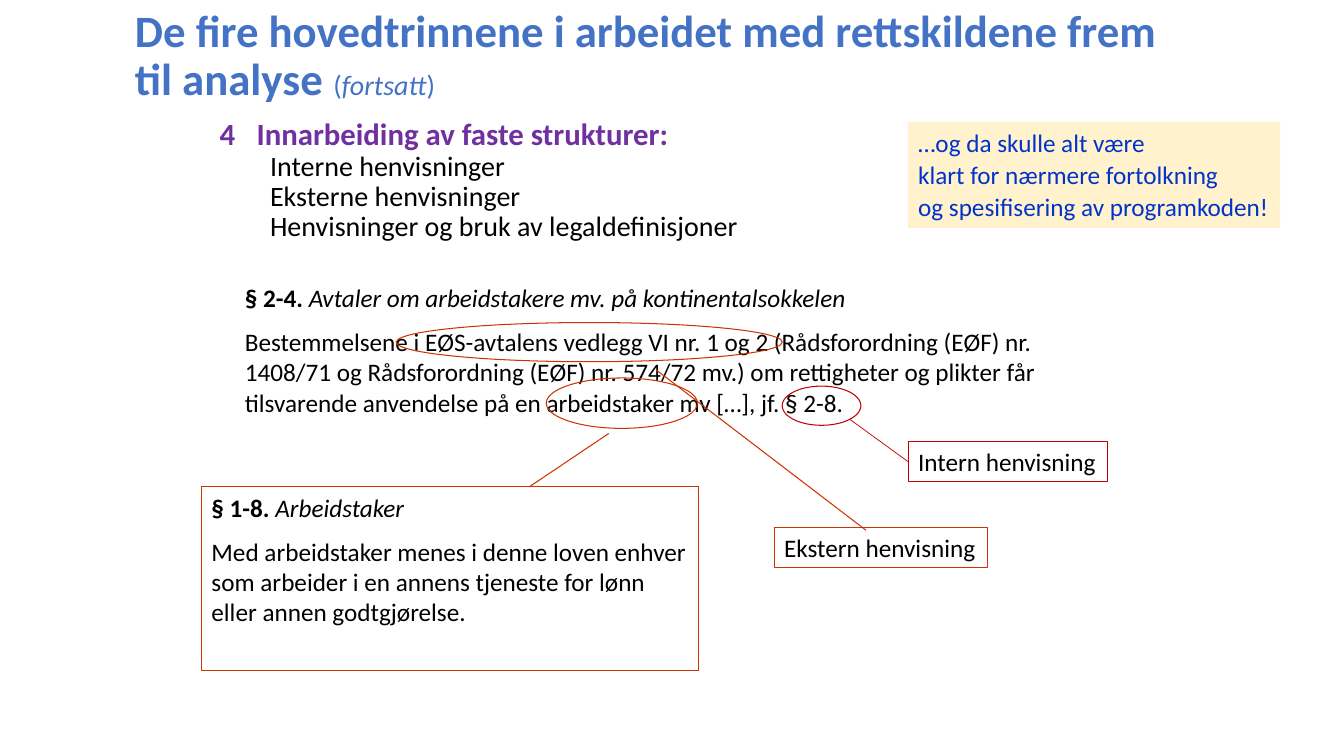
import pptx
import pptx.dml.color
import pptx.enum.shapes
import pptx.enum.text
import pptx.oxml.ns
import pptx.util
from lxml import etree

Pt = pptx.util.Pt
RUST, RED = "CC3300", "C00000"
BLUE, PURPLE, BLACK = "4472C4", "7030A0", "000000"
NOTE_INK, NOTE_FILL = "0033CC", "FFF2CC"


def color(hex_code):
    return pptx.dml.color.RGBColor.from_string(hex_code)


class LawSlide:
    font = "Calibri"
    size = 18

    def __init__(self, deck):
        self.slide = deck.slides.add_slide(deck.slide_layouts[6])

    def text(self, box, paragraphs, ink=BLACK, size=None, line=None, fill=None,
             wrap=True, middle=False, gap=0, spacing=1.0):
        holder = self.slide.shapes.add_textbox(*map(Pt, box))
        if fill:
            holder.fill.solid()
            holder.fill.fore_color.rgb = color(fill)
        if line:
            holder.line.color.rgb = color(line)
            holder.line.width = Pt(0.75)
        frame = holder.text_frame
        frame.word_wrap = wrap
        if middle:
            frame.vertical_anchor = pptx.enum.text.MSO_ANCHOR.MIDDLE
        for index, pieces in enumerate(paragraphs):
            paragraph = frame.paragraphs[0] if index == 0 else frame.add_paragraph()
            paragraph.space_before = paragraph.space_after = Pt(gap)
            paragraph.line_spacing = spacing
            for words, style in pieces:
                run = paragraph.add_run()
                run.text = words
                run.font.name = self.font
                run.font.size = Pt(style.get("size", size or self.size))
                run.font.bold = style.get("bold", False)
                run.font.italic = style.get("italic", False)
                run.font.color.rgb = color(style.get("ink", ink))
        return frame

    def indent(self, paragraph, left, first=0):
        properties = paragraph._p.get_or_add_pPr()
        properties.set("marL", str(Pt(left)))
        properties.set("indent", str(Pt(first)))

    def ellipse(self, box, line):
        ring = self.slide.shapes.add_shape(
            pptx.enum.shapes.MSO_SHAPE.OVAL, *map(Pt, box))
        ring.shadow.inherit = False
        ring.fill.background()
        ring.line.color.rgb = color(line)
        ring.line.width = Pt(0.75)

    def connector(self, ends, line, width=0.75):
        pointer = self.slide.shapes.add_connector(
            pptx.enum.shapes.MSO_CONNECTOR.STRAIGHT, *map(Pt, ends))
        pointer.line.color.rgb = color(line)
        pointer.line.width = Pt(width)
        etree.SubElement(pointer._element.spPr, pptx.oxml.ns.qn("a:effectLst"))


def main():
    deck = pptx.Presentation()
    deck.slide_width, deck.slide_height = Pt(960), Pt(540)
    page = LawSlide(deck)
    bold, italic = {"bold": True}, {"italic": True}

    page.text((89.3, 10.8, 751.7, 59.8), [[
        ("De fire hovedtrinnene i arbeidet med rettskildene frem til analyse ",
         {"bold": True, "size": 32}),
        ("(", {}), ("fortsatt", italic), (")", {})]],
        ink=BLUE, size=20, middle=True, spacing=0.9)

    references = ["Interne henvisninger", "Eksterne henvisninger",
                  "Henvisninger og bruk av legaldefinisjoner"]
    step = page.text(
        (149.8, 81.4, 388, 96.5),
        [[("4\tInnarbeiding av faste strukturer:",
           {"bold": True, "size": 22, "ink": PURPLE})]]
        + [[(reference, {})] for reference in references],
        size=20, wrap=False, spacing=0.9)
    page.indent(step.paragraphs[0], 26.5, -26.5)
    for reference in step.paragraphs[1:]:
        reference.level = 1
        page.indent(reference, 36)

    page.text((167.8, 198, 581.8, 108.7), [
        [("§ 2-4. ", bold),
         ("Avtaler om arbeidstakere mv. på kontinentalsokkelen", italic)],
        [("Bestemmelsene i EØS-avtalens vedlegg VI nr. 1 og 2 (Rådsforordning "
          "(EØF) nr. 1408/71 og Rådsforordning (EØF) nr. 574/72 mv.) om "
          "rettigheter og plikter får tilsvarende anvendelse på en "
          "arbeidstaker mv […], jf. § 2-8.", {})]], gap=5)

    page.text((144, 347.8, 355, 131), [
        [("§ 1-8. ", bold), ("Arbeidstaker", italic)],
        [("Med arbeidstaker menes i denne loven enhver som arbeider i en "
          "annens tjeneste for lønn eller annen godtgjørelse.", {})]],
        line=RUST, gap=5)
    page.ellipse((390.2, 270, 108, 36), RUST)
    page.connector((378, 347.8, 434.9, 309.6), RUST)

    page.ellipse((283, 230.4, 275.8, 28), RUST)
    page.text((553, 376.6, 152.6, 28.8), [[("Ekstern henvisning", {})]],
              line=RUST, wrap=False)
    page.connector((468.7, 264.2, 618.5, 378.7), RUST)

    closing_note = ["…og da skulle alt være",
                    "klart for nærmere fortolkning",
                    "og spesifisering av programkoden!"]
    page.text((648.7, 87.1, 265.7, 75.6),
              [[(words, {})] for words in closing_note],
              ink=NOTE_INK, fill=NOTE_FILL, wrap=False, gap=0.7)

    page.ellipse((558.7, 275.8, 56.2, 28), RED)
    page.text((648.7, 315.4, 142.6, 28.8), [[("Intern henvisning", {})]],
              line=RED, wrap=False)
    page.connector((607, 299.5, 648.7, 329.8), RED, 0.5)

    deck.save("out.pptx")


if __name__ == "__main__":
    main()
